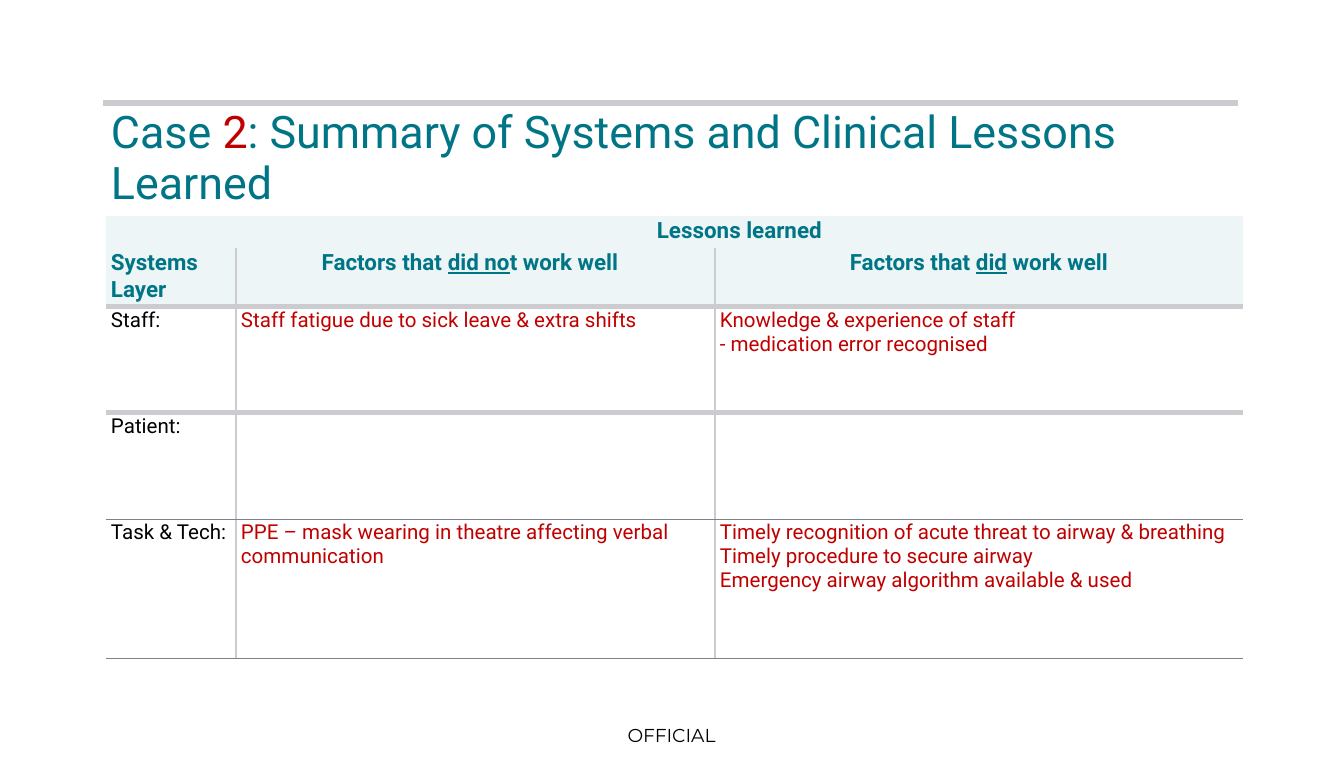
"""Build the Case 2 lessons-learned table slide."""
from pptx import Presentation
from pptx import util as u
from pptx.dml.color import RGBColor
from pptx.enum import shapes, text
from pptx.oxml.ns import qn
from lxml import etree

COLORS = {"teal": "007586", "red": "C00000", "black": "000000",
          "pale": "EDF5F7", "grey": "CCCCD0", "rule": "80808B"}
TITLE = [("Case ", "teal"), ("2", "red"),
         (": Summary of Systems and Clinical Lessons Learned", "teal")]
HEADER = [
    ["", [("Lessons learned", False)], ""],
    [[("Systems Layer", False)],
     [("Factors that ", False), ("did no", True), ("t work well", False)],
     [("Factors that ", False), ("did", True), (" work well", False)]],
]
BODY = [
    ["Staff:", ["Staff fatigue due to sick leave & extra shifts"],
     ["Knowledge & experience of staff", "- medication error recognised"]],
    ["Patient:", [], []],
    ["Task & Tech:",
     ["PPE – mask wearing in theatre affecting verbal communication"],
     ["Timely recognition of acute threat to airway & breathing",
      "Timely procedure to secure airway",
      "Emergency airway algorithm available & used"]],
]
COLS = [130, 479, 528]
ROWS = [32, 59, 106, 106, 139]
LEFT, TOP = 106, 216
THICK, THIN, HAIR = ("grey", 3), ("grey", 1), ("rule", 0.25)
ROW_RULES = [None, THICK, THICK, HAIR, HAIR]
NO_STYLE = "{2D5ABB26-0587-4C30-8999-92F81FD0307C}"


def px(n):
    return u.Emu(round(n * 914400 / 134.4))


def rgb(name):
    return RGBColor.from_string(COLORS[name])


def add_run(p, words, size, color, font="Roboto", bold=False, underline=False):
    r = p.add_run()
    r.text = words
    r.font.name, r.font.size = font, u.Pt(size)
    r.font.bold, r.font.underline = bold, underline
    r.font.color.rgb = rgb(color)


def set_margins(box, x, y):
    box.margin_left = box.margin_right = px(x)
    box.margin_top = box.margin_bottom = px(y)


def add_border(cell, side, rule):
    if rule:
        color, width = rule
        ln = etree.SubElement(cell._tc.get_or_add_tcPr(), qn(f"a:ln{side}"),
                              w=str(int(u.Pt(width))))
        fill = etree.SubElement(ln, qn("a:solidFill"))
        etree.SubElement(fill, qn("a:srgbClr"), val=COLORS[color])


def format_cell(cell, row, col):
    set_margins(cell, 5, 2)
    add_border(cell, "L", THIN if row and col else None)
    add_border(cell, "R", THIN if row and col < 2 else None)
    add_border(cell, "T", ROW_RULES[row - 1] if row else None)
    add_border(cell, "B", ROW_RULES[row])
    if row < len(HEADER):
        cell.fill.solid()
        cell.fill.fore_color.rgb = rgb("pale")
    else:
        cell.fill.background()


def fill_cell(cell, paragraphs, size, color, bold, align):
    tf = cell.text_frame
    for i, runs in enumerate(paragraphs):
        p = tf.add_paragraph() if i else tf.paragraphs[0]
        p.alignment = align
        for words, underline in runs:
            add_run(p, words, size, color, bold=bold, underline=underline)
    if not paragraphs:
        etree.SubElement(tf.paragraphs[0]._p, qn("a:endParaRPr"), sz=str(size * 100))


def add_title(s):
    sp = s.shapes.title
    sp.left, sp.top, sp.width, sp.height = px(LEFT), px(103), px(sum(COLS)), px(122)
    tf = sp.text_frame
    tf.word_wrap, tf.auto_size = True, text.MSO_AUTO_SIZE.NONE
    tf.vertical_anchor = text.MSO_ANCHOR.TOP
    set_margins(tf, 5, 5)
    p = tf.paragraphs[0]
    p.alignment, p.line_spacing = text.PP_ALIGN.LEFT, 0.95
    for words, color in TITLE:
        add_run(p, words, 24, color)


def add_lessons(s):
    frame = s.shapes.add_table(len(ROWS), len(COLS), px(LEFT), px(TOP),
                               px(sum(COLS)), px(sum(ROWS)))
    table = frame.table
    table.first_row = table.horz_banding = False
    table._tbl.tblPr.find(qn("a:tableStyleId")).text = NO_STYLE
    for column, width in zip(table.columns, COLS):
        column.width = px(width)
    for row, height in zip(table.rows, ROWS):
        row.height = px(height)
    for row, cells in enumerate(HEADER + BODY):
        for col, content in enumerate(cells):
            cell = table.cell(row, col)
            format_cell(cell, row, col)
            if row < len(HEADER):
                align = text.PP_ALIGN.CENTER if col else text.PP_ALIGN.LEFT
                fill_cell(cell, [content] if content else [], 12, "teal", True, align)
            else:
                lines = content if col else [content]
                fill_cell(cell, [[(line, False)] for line in lines], 11,
                          "red" if col else "black", False, text.PP_ALIGN.LEFT)
    table.cell(0, 1).merge(table.cell(0, 2))
    table.cell(1, 1).margin_right = px(16)


def add_rule(s):
    line = s.shapes.add_connector(shapes.MSO_CONNECTOR.STRAIGHT,
                                  px(103), px(103), px(1238), px(103))
    line.line.color.rgb, line.line.width = rgb("grey"), u.Pt(3)
    etree.SubElement(line._element.spPr, qn("a:effectLst"))


def add_marking(s):
    tf = s.shapes.add_textbox(px(603), px(715), px(137), px(42)).text_frame
    tf.word_wrap = True
    tf.vertical_anchor = text.MSO_ANCHOR.MIDDLE
    set_margins(tf, 0, 0)
    p = tf.paragraphs[0]
    p.alignment, p.line_spacing = text.PP_ALIGN.CENTER, 0.98
    add_run(p, "OFFICIAL", 10, "black", font="Montserrat")


def main():
    prs = Presentation()
    prs.slide_width, prs.slide_height = px(1344), px(757)
    s = prs.slides.add_slide(prs.slide_layouts[5])
    add_marking(s)
    add_rule(s)
    add_title(s)
    add_lessons(s)
    prs.save("out.pptx")


if __name__ == "__main__":
    main()
